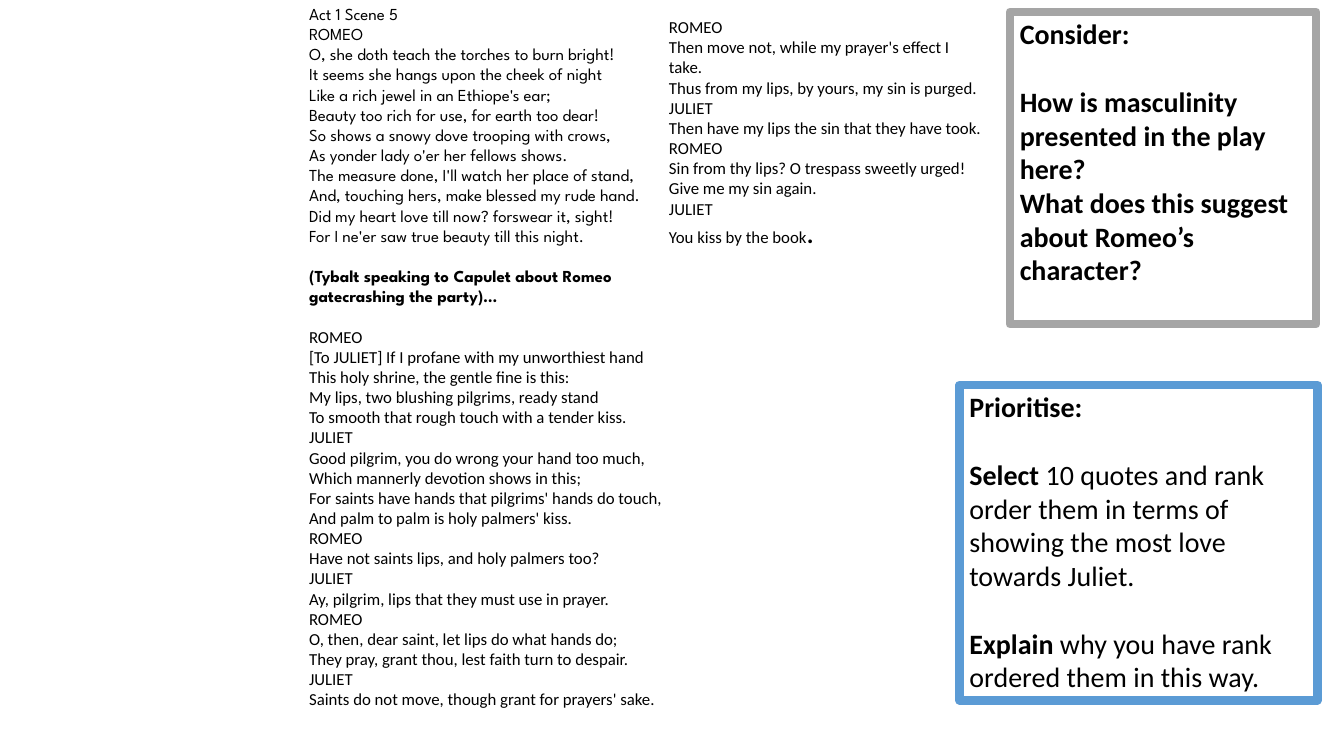
from dataclasses import dataclass

from pptx import Presentation
from pptx.dml.color import RGBColor
from pptx.enum.shapes import MSO_SHAPE
from pptx.enum.text import MSO_ANCHOR, MSO_AUTO_SIZE, PP_ALIGN
from pptx.slide import Slide
from pptx.util import Cm, Pt

RECTANGLE = MSO_SHAPE.RECTANGLE
TOP = MSO_ANCHOR.TOP
LEFT = PP_ALIGN.LEFT
NO_AUTOFIT = MSO_AUTO_SIZE.NONE
COLOURS = {"text": "000000", "paper": "FFFFFF", "grey": "A5A5A5", "blue": "5B9BD5"}
BODY_FONT = "Calibri"
OPENING_FONT = "League Spartan"
VERSE_GAP = 14.4
TASK_GAP = 24.4


@dataclass(frozen=True)
class Segment:
    lines: str
    bold: bool = False
    font: str = BODY_FONT
    size: float | None = None


@dataclass(frozen=True)
class Passage:
    segments: tuple[Segment, ...]
    gap: float = 0


@dataclass(frozen=True)
class Box:
    left: float
    top: float
    width: float
    height: float
    size: float
    passages: tuple[Passage, ...]
    border: str | None = None


def speech(lines: str, gap: float = 0) -> Passage:
    return Passage((Segment(lines),), gap)


def opening(lines: str, bold: bool = False, gap: float = 0) -> Passage:
    return Passage((Segment(lines, bold, OPENING_FONT),), gap)


def colour(name: str) -> RGBColor:
    return RGBColor.from_string(COLOURS[name])


FIRST_EXTRACT = (
    opening("Act 1 Scene 5"),
    opening("""ROMEO
O, she doth teach the torches to burn bright!
It seems she hangs upon the cheek of night
Like a rich jewel in an Ethiope's ear;
Beauty too rich for use, for earth too dear!
So shows a snowy dove trooping with crows,
As yonder lady o'er her fellows shows.
The measure done, I'll watch her place of stand,
And, touching hers, make blessed my rude hand.
Did my heart love till now? forswear it, sight!
For I ne'er saw true beauty till this night."""),
    opening("(Tybalt speaking to Capulet about Romeo gatecrashing the party)…",
            bold=True, gap=VERSE_GAP),
    speech("""ROMEO
[To JULIET] If I profane with my unworthiest hand
This holy shrine, the gentle fine is this:
My lips, two blushing pilgrims, ready stand
To smooth that rough touch with a tender kiss.""", VERSE_GAP),
    speech("""JULIET
Good pilgrim, you do wrong your hand too much,
Which mannerly devotion shows in this;
For saints have hands that pilgrims' hands do touch,
And palm to palm is holy palmers' kiss."""),
    speech("ROMEO\nHave not saints lips, and holy palmers too?"),
    speech("JULIET\nAy, pilgrim, lips that they must use in prayer."),
    speech("""ROMEO
O, then, dear saint, let lips do what hands do;
They pray, grant thou, lest faith turn to despair."""),
    speech("JULIET\nSaints do not move, though grant for prayers' sake."),
)

SECOND_EXTRACT = (
    speech("""ROMEO
Then move not, while my prayer's effect I take.
Thus from my lips, by yours, my sin is purged."""),
    speech("JULIET\nThen have my lips the sin that they have took."),
    speech("""ROMEO
Sin from thy lips? O trespass sweetly urged!
Give me my sin again."""),
    Passage((Segment("JULIET\nYou kiss by the book"), Segment(".", bold=True, size=18))),
)

CONSIDER = (
    Passage((Segment("Consider:", True),)),
    Passage((Segment("How is masculinity presented in the play here? \n"
                     "What does this suggest about Romeo’s character?", True),), TASK_GAP),
)

PRIORITISE = (
    Passage((Segment("Prioritise:", True),)),
    Passage((Segment("Select", True),
             Segment(" 10 quotes and rank order them in terms of showing "
                     "the most love towards Juliet.")), TASK_GAP),
    Passage((Segment("Explain", True),
             Segment(" why you have rank ordered them in this way.")), TASK_GAP),
)

BOXES = (
    Box(25.45, 0.3, 7.72, 7.87, 20, CONSIDER, "grey"),
    Box(24.18, 9.7, 9.02, 7.95, 20, PRIORITISE, "blue"),
    Box(7.54, -0.03, 9.93, 18.21, 12, FIRST_EXTRACT),
    Box(16.61, 0.3, 8.46, 6.15, 12, SECOND_EXTRACT),
)


def add_box(slide: Slide, box: Box) -> None:
    bounds = (Cm(box.left), Cm(box.top), Cm(box.width), Cm(box.height))
    if box.border:
        shape = slide.shapes.add_shape(RECTANGLE, *bounds)
        shape.shadow.inherit = False
        shape.fill.solid()
        shape.fill.fore_color.rgb = colour("paper")
        shape.line.color.rgb = colour(box.border)
        shape.line.width = Pt(6)
    else:
        shape = slide.shapes.add_textbox(*bounds)
    frame = shape.text_frame
    frame.word_wrap = True
    frame.auto_size = NO_AUTOFIT
    frame.vertical_anchor = TOP
    for index, passage in enumerate(box.passages):
        paragraph = frame.add_paragraph() if index else frame.paragraphs[0]
        paragraph.alignment = LEFT
        paragraph.space_before = Pt(passage.gap)
        paragraph.font.size = Pt(box.size)
        for segment in passage.segments:
            for number, line in enumerate(segment.lines.split("\n")):
                if number:
                    paragraph.add_line_break()
                run = paragraph.add_run()
                run.text = line
                run.font.name = segment.font
                run.font.size = Pt(segment.size or box.size)
                run.font.bold = segment.bold
                run.font.color.rgb = colour("text")


def main() -> None:
    presentation = Presentation()
    presentation.slide_width = Cm(33.87)
    presentation.slide_height = Cm(19.05)
    slide = presentation.slides.add_slide(presentation.slide_layouts[6])
    for box in BOXES:
        add_box(slide, box)
    presentation.save("out.pptx")


if __name__ == "__main__":
    main()
